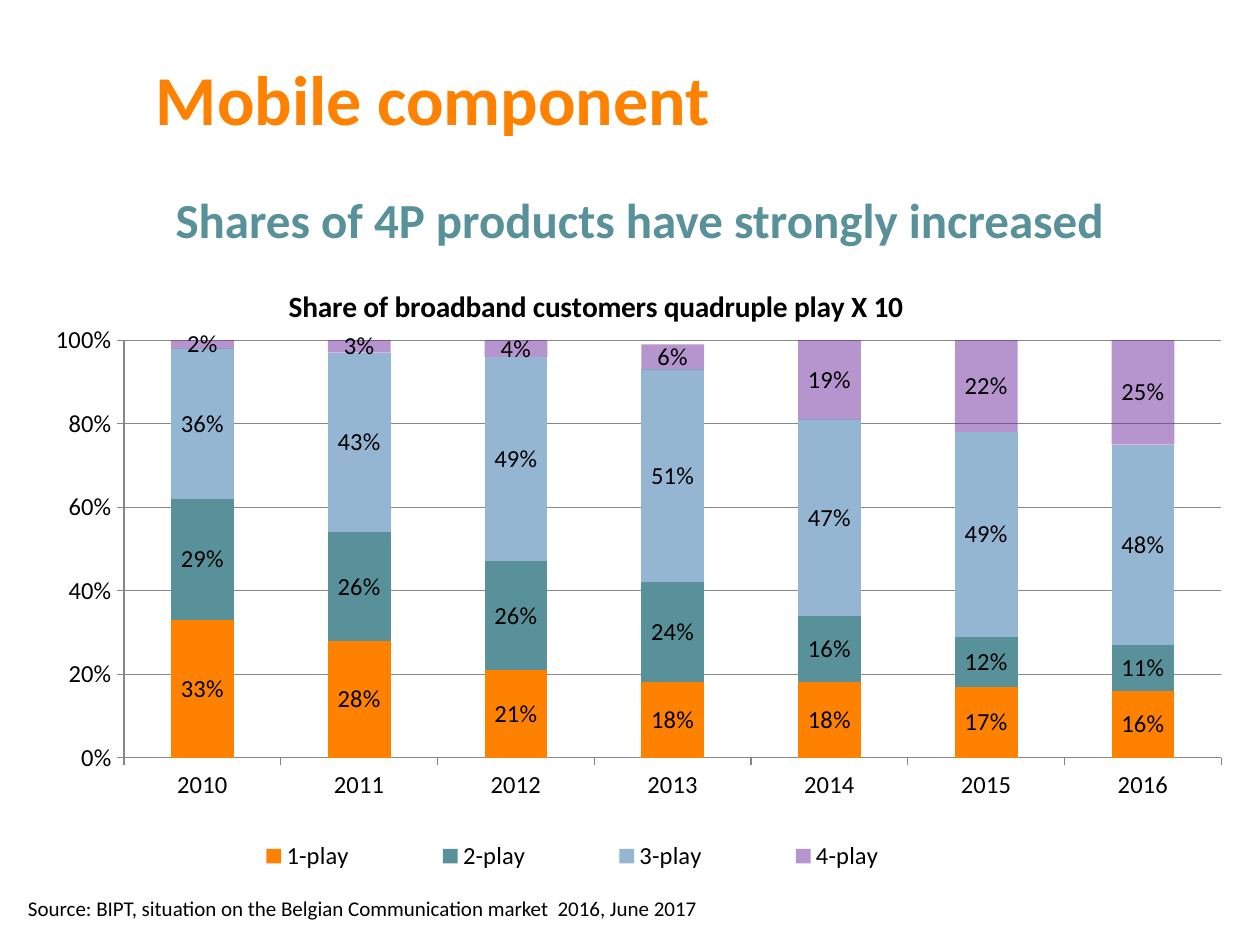
from dataclasses import dataclass

from lxml.etree import SubElement
from pptx import Presentation
from pptx.chart.data import CategoryChartData
from pptx.dml.color import RGBColor
from pptx.enum.chart import XL_CHART_TYPE as ChartType
from pptx.enum.chart import XL_LABEL_POSITION as LabelPosition
from pptx.enum.chart import XL_LEGEND_POSITION as LegendPosition
from pptx.enum.chart import XL_TICK_MARK as TickMark
from pptx.enum.text import MSO_ANCHOR as Anchor
from pptx.enum.text import PP_ALIGN as Align
from pptx.oxml import parse_xml
from pptx.oxml.ns import nsdecls, qn
from pptx.util import Emu, Pt


@dataclass(frozen=True)
class Theme:
    font: str = "Calibri"
    orange: str = "FF8100"
    teal: str = "589199"
    blue: str = "94B6D2"
    purple: str = "7030A0"
    black: str = "000000"
    grid: str = "868686"
    title: float = 40
    subtitle: float = 28
    chart_title: float = 16.8
    chart: float = 14
    source: float = 12


THEME = Theme()
YEARS = [str(year) for year in range(2010, 2017)]
# Name, colour, opacity in percent, share per year
PLAYS = [
    ("1-play", THEME.orange, 100, (0.33, 0.28, 0.21, 0.18, 0.18, 0.17, 0.16)),
    ("2-play", THEME.teal, 100, (0.29, 0.26, 0.26, 0.24, 0.16, 0.12, 0.11)),
    ("3-play", THEME.blue, 100, (0.36, 0.43, 0.49, 0.51, 0.47, 0.49, 0.48)),
    ("4-play", THEME.purple, 51, (0.02, 0.03, 0.04, 0.06, 0.19, 0.22, 0.25)),
]


def px(length):
    return Emu(round(length * 914400 / 126))


def style_font(font, size, color=THEME.black, bold=False):
    font.name = THEME.font
    font.size = Pt(size)
    font.bold = bold
    font.color.rgb = RGBColor.from_string(color)


def add_text(slide, box, text, *, size, color=THEME.black, bold=False,
             align=Align.LEFT, anchor=Anchor.TOP, inset=(13, 6)):
    frame = slide.shapes.add_textbox(*map(px, box)).text_frame
    frame.word_wrap = True
    frame.vertical_anchor = anchor
    frame.margin_left = frame.margin_right = px(inset[0])
    frame.margin_top = frame.margin_bottom = px(inset[1])
    paragraph = frame.paragraphs[0]
    paragraph.alignment = align
    run = paragraph.add_run()
    run.text = text
    style_font(run.font, size, color, bold)


def make_layout(x, y, width=None, height=None, inner=False):
    """Manual chart layout in fractions of the chart area."""
    target = '<c:layoutTarget val="inner"/>' if inner else ""
    sizes = "" if width is None else f'<c:w val="{width}"/><c:h val="{height}"/>'
    return parse_xml(
        f'<c:layout {nsdecls("c")}><c:manualLayout>{target}'
        '<c:xMode val="edge"/><c:yMode val="edge"/>'
        f'<c:x val="{x}"/><c:y val="{y}"/>{sizes}</c:manualLayout></c:layout>')


def place_part(part, layout, after=None):
    for old in part.findall(qn("c:layout")):
        part.remove(old)
    if after:
        part.find(qn(after)).addnext(layout)
    else:
        part.insert(0, layout)


def style_axis(axis):
    axis.major_tick_mark = TickMark.OUTSIDE
    axis.minor_tick_mark = TickMark.NONE
    axis.format.line.color.rgb = RGBColor.from_string(THEME.grid)
    axis.format.line.width = Pt(0.75)
    style_font(axis.tick_labels.font, THEME.chart)


def style_series(series, color, opacity):
    fill = series.format.fill
    fill.solid()
    fill.fore_color.rgb = RGBColor.from_string(color)
    if opacity < 100:
        color_element = series.format.fill._xPr.find(".//" + qn("a:srgbClr"))
        SubElement(color_element, qn("a:alpha")).set("val", str(opacity * 1000))
    labels = series.data_labels
    labels.show_value = True
    labels.position = LabelPosition.CENTER
    labels.number_format = "0%"
    labels.number_format_is_linked = False
    style_font(labels.font, THEME.chart)


def add_share_chart(slide, box):
    data = CategoryChartData(number_format="0%")
    data.categories = YEARS
    for name, _, _, shares in PLAYS:
        data.add_series(name, shares)
    chart = slide.shapes.add_chart(
        ChartType.COLUMN_STACKED, *map(px, box), data).chart
    style_font(chart.font, THEME.chart)

    # Title
    title = chart.chart_title
    title.text_frame.text = "Share of broadband customers quadruple play X 10"
    style_font(title.text_frame.paragraphs[0].runs[0].font,
               THEME.chart_title, bold=True)
    place_part(title._element, make_layout(0.24, 0.01), after="c:tx")

    # Columns
    plot = chart.plots[0]
    plot.gap_width, plot.overlap = 150, 100
    plot.vary_by_categories = False
    for series, (_, color, opacity, _) in zip(plot.series, PLAYS):
        style_series(series, color, opacity)
    plot_area = chart._chartSpace.find(".//" + qn("c:plotArea"))
    place_part(plot_area, make_layout(0.116, 0.106, 0.854, 0.679, inner=True))

    # Axes
    style_axis(chart.category_axis)
    values = chart.value_axis
    style_axis(values)
    values.minimum_scale, values.maximum_scale, values.major_unit = 0, 1, 0.2
    values.tick_labels.number_format = "0%"
    values.tick_labels.number_format_is_linked = False
    grid_line = values.major_gridlines.format.line
    grid_line.color.rgb = RGBColor.from_string(THEME.grid)
    grid_line.width = Pt(0.75)

    # Legend
    chart.has_legend = True
    chart.legend.position = LegendPosition.BOTTOM
    chart.legend.include_in_layout = False
    style_font(chart.legend.font, THEME.chart)
    place_part(chart.legend._element, make_layout(0.16, 0.91, 0.61, 0.07),
               after="c:legendPos")


def add_headings(slide, box):
    left, top, width, _ = box
    add_text(slide, (left + 77, top, width, 158), "Mobile component",
             size=THEME.title, color=THEME.orange, bold=True,
             anchor=Anchor.BOTTOM, inset=(5, 5))
    add_text(slide, (left, top + 149, width - 3, 118),
             "Shares of 4P products have strongly increased",
             size=THEME.subtitle, color=THEME.teal, bold=True,
             align=Align.CENTER, anchor=Anchor.BOTTOM, inset=(5, 5))


def add_source(slide, box):
    add_text(slide, box,
             "Source: BIPT, situation on the Belgian Communication market  2016, June 2017",
             size=THEME.source)


def main():
    presentation = Presentation()
    presentation.slide_width, presentation.slide_height = px(1260), px(945)
    slide = presentation.slides.add_slide(presentation.slide_layouts[6])
    add_share_chart(slide, (-25, 275, 1285, 615))
    add_headings(slide, (74, -14, 1134, 267))
    add_source(slide, (15, 890, 824, 38))
    presentation.save("out.pptx")


if __name__ == "__main__":
    main()
